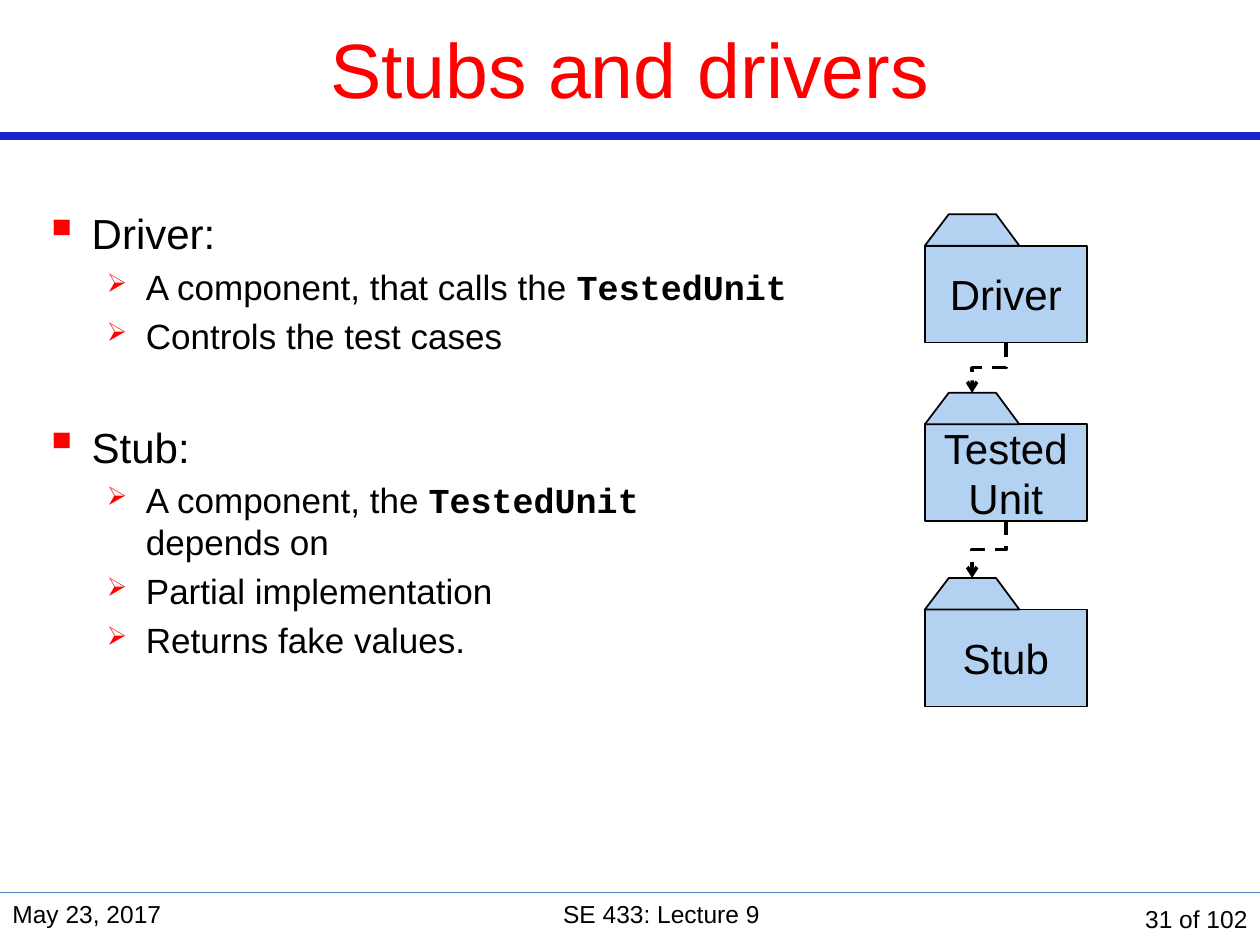
from dataclasses import dataclass

from lxml import etree
from pptx import Presentation
from pptx import util as u
from pptx.dml.color import RGBColor
from pptx.enum import dml, shapes, text
from pptx.oxml import ns


@dataclass(frozen=True)
class Theme:
    sans: str = "Arial"
    mono: str = "Courier New"
    ink: str = "000000"
    accent: str = "FF0000"
    rule: str = "1822CD"
    footer_rule: str = "4F81BD"
    folder: str = "B3D1F0"
    title_size: int = 44
    topic_size: int = 24
    point_size: int = 20
    footer_size: int = 14


ALIGN, ANCHOR = text.PP_ALIGN, text.MSO_ANCHOR
CELL = u.Inches(0.25)  # the slide is a grid of 40 columns by 30 rows
COLUMNS, ROWS = 40, 30


def grid(*cells):
    return [round(cell * CELL) for cell in cells]


def add_xml(parent, tag, **attributes):
    return etree.SubElement(parent, ns.qn(tag), attributes)


def apply_format(target, values):
    for name, value in values.items():
        setattr(target, name, value)


class SlideBuilder:
    def __init__(self, slide, theme):
        self.shapes, self.theme = slide.shapes, theme

    def words(self, paragraph, words, size, color=None, mono=False):
        run = paragraph.add_run()
        run.text = words
        apply_format(run.font, {
            "name": self.theme.mono if mono else self.theme.sans,
            "size": u.Pt(size), "bold": mono})
        run.font.color.rgb = RGBColor.from_string(color or self.theme.ink)

    def label(self, box, words, size, color=None, align=ALIGN.LEFT,
              anchor=ANCHOR.TOP, wrap=True):
        frame = box.text_frame
        apply_format(frame, {"word_wrap": wrap, "vertical_anchor": anchor})
        for i, line in enumerate(words.split("\n")):
            paragraph = frame.add_paragraph() if i else frame.paragraphs[0]
            paragraph.alignment = align
            self.words(paragraph, line, size, color)

    def text(self, area, words, size, **style):
        self.label(self.shapes.add_textbox(*grid(*area)), words, size, **style)

    def line(self, start, end, color, width, kind=shapes.MSO_CONNECTOR.STRAIGHT):
        line = self.shapes.add_connector(kind, *grid(*start, *end))
        line.line.color.rgb = RGBColor.from_string(color)
        line.line.width = u.Pt(width)
        add_xml(line.element.spPr, "a:effectLst")
        return line

    def dependency(self, start, end):
        """Dashed elbow arrow that leaves downwards: a quarter-turned connector."""
        (x1, y1), (x2, y2) = start, end
        mid_x, mid_y = (x1 + x2) / 2, (y1 + y2) / 2
        half_w, half_h = (y2 - y1) / 2, (x1 - x2) / 2
        arrow = self.line((mid_x - half_w, mid_y - half_h),
                          (mid_x + half_w, mid_y + half_h),
                          self.theme.ink, 2, shapes.MSO_CONNECTOR.ELBOW)
        arrow.element.spPr.find(ns.qn("a:xfrm")).set("rot", "5400000")
        arrow.line.dash_style = dml.MSO_LINE.DASH
        add_xml(arrow.element.spPr.find(ns.qn("a:ln")), "a:tailEnd", type="arrow")

    def paint(self, shape):
        shape.shadow.inherit = False
        shape.fill.solid()
        shape.fill.fore_color.rgb = RGBColor.from_string(self.theme.folder)
        shape.line.color.rgb = RGBColor.from_string(self.theme.ink)
        shape.line.width = u.Pt(1)

    def folder(self, left, top, width, height, name):
        body = self.shapes.add_shape(shapes.MSO_SHAPE.RECTANGLE,
                                     *grid(left, top, width, height))
        self.paint(body)
        self.label(body, name, self.theme.topic_size, align=ALIGN.CENTER,
                   anchor=ANCHOR.MIDDLE, wrap=False)
        tab = self.shapes.build_freeform(*grid(left, top), scale=1.0)
        tab.add_line_segments([tuple(grid(left + dx, top - dy)) for dx, dy in
                               ((0.76, 1), (2.26, 1), (3, 0))], close=True)
        self.paint(tab.convert_to_shape())

    def outline(self, area, topics):
        frame = self.shapes.add_textbox(*grid(*area)).text_frame
        apply_format(frame, {"word_wrap": True, "margin_top": 0})
        paragraph = frame.paragraphs[0]
        for i, (topic, points) in enumerate(topics):
            if i:
                paragraph = frame.add_paragraph()
            self.bullet(paragraph, "▪", 114, 0.38, 0.38, 37.2 if i else 0)
            self.words(paragraph, topic, self.theme.topic_size)
            for point in points:
                paragraph = frame.add_paragraph()
                paragraph.level = 1
                self.bullet(paragraph, "➢", 74, 0.81, 0.31, 4)
                for words, mono in point:
                    if words == "\n":
                        paragraph.add_line_break()
                    else:
                        self.words(paragraph, words, self.theme.point_size, mono=mono)

    def bullet(self, paragraph, sign, percent, margin, hang, space):
        paragraph.space_before = u.Pt(space)
        props = paragraph._p.get_or_add_pPr()
        props.set("marL", str(u.Inches(margin)))
        props.set("indent", str(-u.Inches(hang)))
        add_xml(add_xml(props, "a:buClr"), "a:srgbClr", val=self.theme.accent)
        add_xml(props, "a:buSzPct", val=str(percent * 1000))
        add_xml(props, "a:buChar", char=sign)


def main():
    theme = Theme()
    deck = Presentation()
    apply_format(deck, {"slide_width": COLUMNS * CELL, "slide_height": ROWS * CELL})
    page = SlideBuilder(deck.slides.add_slide(deck.slide_layouts[6]), theme)

    # Rules and title
    header, footer = 4.33, 28.33
    page.line((0, header), (COLUMNS, header), theme.rule, 4.5)
    page.line((0, footer), (COLUMNS, footer), theme.footer_rule, 0.75)
    page.text((0, 0, COLUMNS, header), "Stubs and drivers", theme.title_size,
              color=theme.accent, align=ALIGN.CENTER, anchor=ANCHOR.MIDDLE)

    # Definitions
    unit = ("TestedUnit", True)
    page.outline((1, 6.6, 38, 21.7), [
        ("Driver:", [[("A component, that calls the ", False), unit],
                     [("Controls the test cases", False)]]),
        ("Stub:", [[("A component, the ", False), unit, ("\n", False),
                    ("depends on", False)],
                   [("Partial implementation", False)],
                   [("Returns fake values.", False)]]),
    ])

    # Folders, each depending on the next one down
    left, width, height = 29.36, 5.14, 3.08
    folders = [("Driver", 7.8), ("Tested\nUnit", 13.47), ("Stub", 19.35)]
    for name, top in folders:
        page.folder(left, top, width, height, name)
    for (_, upper), (_, lower) in zip(folders, folders[1:]):
        page.dependency((left + width / 2, upper + height), (left + 1.5, lower - 1))

    # Footer
    for x, span, words, align, anchor in (
            (0, 8.67, "May 23, 2017", ALIGN.LEFT, ANCHOR.TOP),
            (8.67, 24.66, "SE 433: Lecture 9", ALIGN.CENTER, ANCHOR.TOP),
            (33.33, 6.67, "31 of 102", ALIGN.RIGHT, ANCHOR.MIDDLE)):
        page.text((x, footer, span, ROWS - footer), words, theme.footer_size,
                  align=align, anchor=anchor)

    deck.save("out.pptx")


if __name__ == "__main__":
    main()
